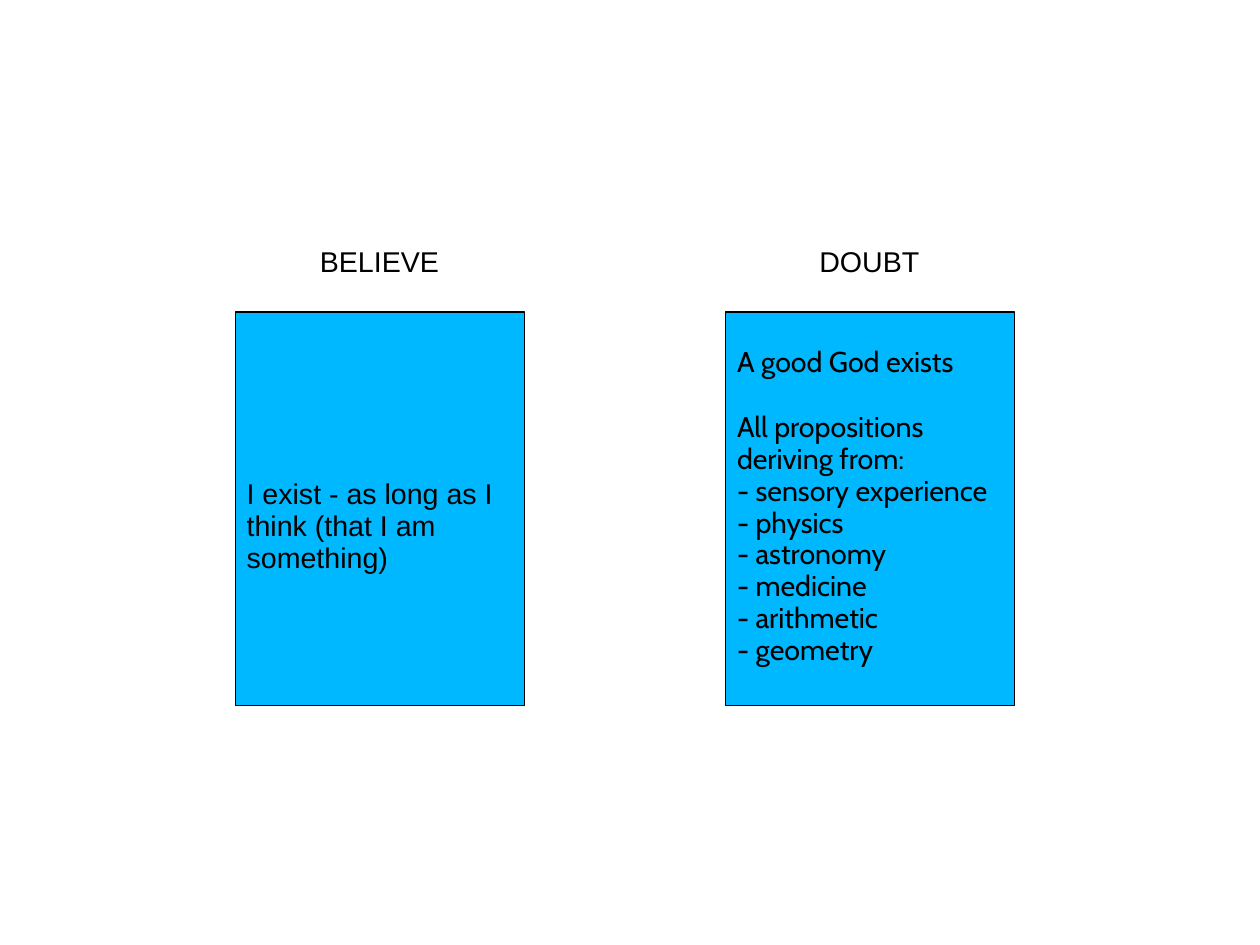
import pptx
import pptx.util
import pptx.dml.color
import pptx.enum.shapes
import pptx.enum.text

Inches, Pt, Cm = pptx.util.Inches, pptx.util.Pt, pptx.util.Cm
RGBColor = pptx.dml.color.RGBColor

# heading, heading width, font, space above the text, groups of lines
COLUMNS = [
    ("BELIEVE", 1.25, "Arial", 1.46,
     [["I exist - as long as I think (that I am something)"]]),
    ("DOUBT", 1.09, "Cabin", 0.31,
     [["A good God exists"],
      ["All propositions deriving from:", "- sensory experience", "- physics",
       "- astronomy", "- medicine", "- arithmetic", "- geometry"]]),
]

SLIDE_WIDTH, SLIDE_HEIGHT = Cm(28), Cm(21)
PANEL_LEFT, PANEL_TOP = 2.06, 2.73
PANEL_WIDTH, PANEL_HEIGHT = 2.53, 3.44
COLUMN_STEP = 4.29
HEADING_TOP, HEADING_HEIGHT = 2.11, 0.38
GROUP_GAP = Pt(20.5)
TEXT_SIZE = Pt(18)
LINE_SPACING = 0.93

PANEL_BLUE = RGBColor(0x00, 0xB8, 0xFF)
BLACK = RGBColor(0x00, 0x00, 0x00)


def format_text(text_frame, font_name):
    for paragraph in text_frame.paragraphs:
        paragraph.alignment = pptx.enum.text.PP_ALIGN.LEFT
        paragraph.line_spacing = LINE_SPACING
        for run in paragraph.runs:
            run.font.name = font_name
            run.font.size = TEXT_SIZE
            run.font.color.rgb = BLACK


def add_heading(slide, heading, center, width):
    box = slide.shapes.add_textbox(
        Inches(center - width / 2), Inches(HEADING_TOP),
        Inches(width), Inches(HEADING_HEIGHT))
    box.text_frame.word_wrap = False
    box.text_frame.auto_size = pptx.enum.text.MSO_AUTO_SIZE.SHAPE_TO_FIT_TEXT
    box.text_frame.text = heading
    format_text(box.text_frame, "Arial")


def add_panel(slide, left, groups, font_name, space_above):
    panel = slide.shapes.add_shape(
        pptx.enum.shapes.MSO_SHAPE.RECTANGLE, Inches(left), Inches(PANEL_TOP),
        Inches(PANEL_WIDTH), Inches(PANEL_HEIGHT))
    panel.shadow.inherit = False
    panel.fill.solid()
    panel.fill.fore_color.rgb = PANEL_BLUE
    panel.line.color.rgb = BLACK
    panel.line.width = Pt(0.75)

    text_frame = panel.text_frame
    text_frame.word_wrap = True
    text_frame.vertical_anchor = pptx.enum.text.MSO_ANCHOR.TOP
    text_frame.margin_top = Inches(space_above)
    text_frame.text = "\n".join(line for group in groups for line in group)
    format_text(text_frame, font_name)

    group_start = 0
    for group in groups[:-1]:
        group_start += len(group)
        text_frame.paragraphs[group_start].space_before = GROUP_GAP


def main():
    presentation = pptx.Presentation()
    presentation.slide_width = SLIDE_WIDTH
    presentation.slide_height = SLIDE_HEIGHT
    slide = presentation.slides.add_slide(presentation.slide_layouts[6])

    for index, (heading, width, font_name, space_above, groups) in enumerate(COLUMNS):
        left = PANEL_LEFT + index * COLUMN_STEP
        add_panel(slide, left, groups, font_name, space_above)
        add_heading(slide, heading, left + PANEL_WIDTH / 2, width)

    presentation.save("out.pptx")


if __name__ == "__main__":
    main()
